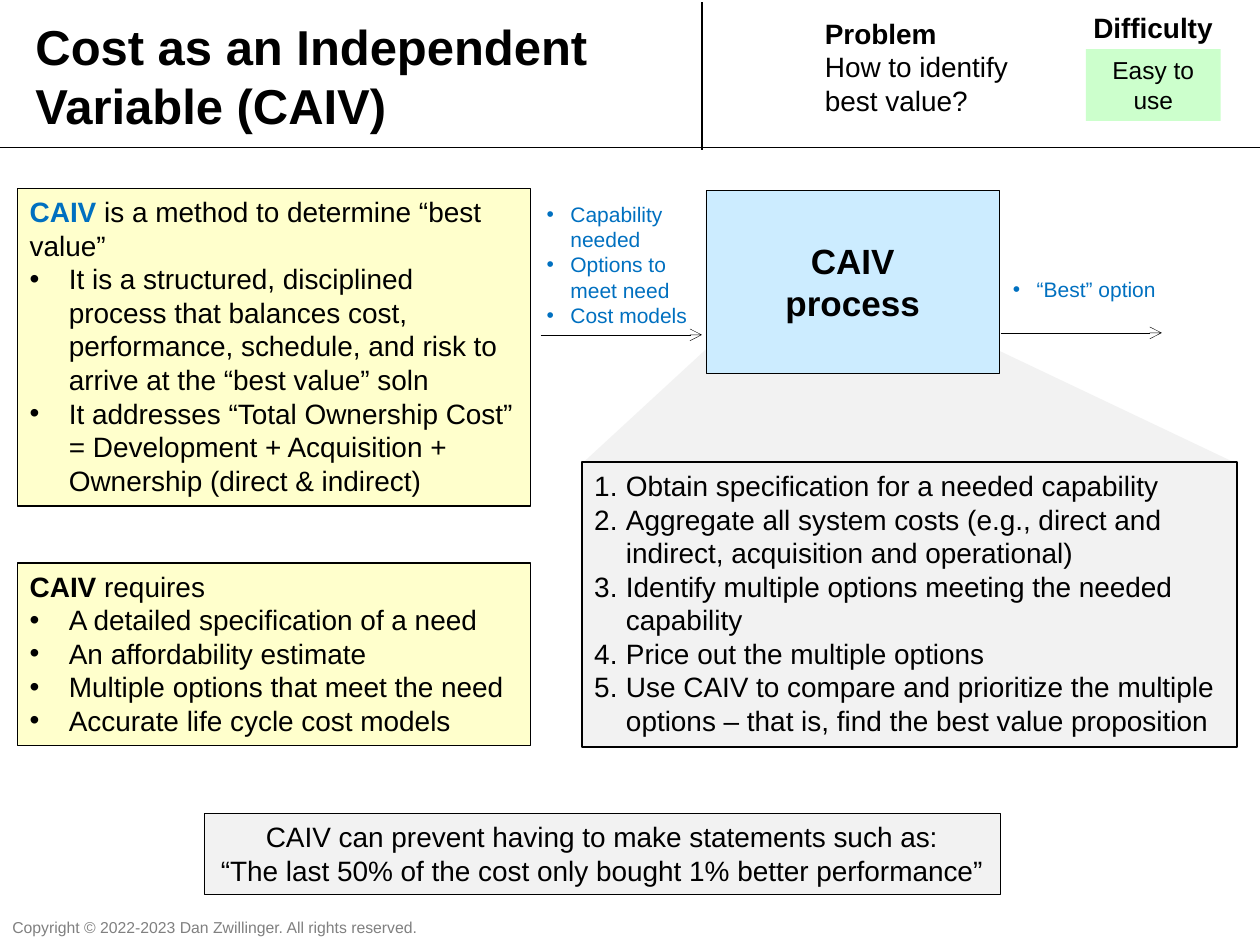
from lxml import etree
from pptx import Presentation
from pptx.dml.color import RGBColor
from pptx.enum.shapes import MSO_CONNECTOR, MSO_SHAPE
from pptx.enum.text import MSO_ANCHOR, MSO_AUTO_SIZE, PP_ALIGN
from pptx.oxml.ns import qn
from pptx.util import Cm, Pt

RECTANGLE = MSO_SHAPE.RECTANGLE
TRIANGLE = MSO_SHAPE.ISOSCELES_TRIANGLE
STRAIGHT = MSO_CONNECTOR.STRAIGHT
TOP, MIDDLE = MSO_ANCHOR.TOP, MSO_ANCHOR.MIDDLE
LEFT, CENTER = PP_ALIGN.LEFT, PP_ALIGN.CENTER
NO_AUTOFIT = MSO_AUTO_SIZE.NONE

FONT = "Arial"
BLACK, BLUE, GRAY = "000000", "0070C0", "808080"
YELLOW, SKY, GREEN, PALE = "FFFFCC", "CCECFF", "CCFFCC", "F2F2F2"


def rgb(value):
    return RGBColor.from_string(value)


def place(element, left, top, width, height):
    element.left, element.top = Cm(left), Cm(top)
    element.width, element.height = Cm(width), Cm(height)


def set_list(paragraph, marker, indent):
    properties = paragraph._p.get_or_add_pPr()
    properties.set("marL", str(Cm(indent)))
    properties.set("indent", str(-Cm(indent)))
    if marker == "number":
        etree.SubElement(properties, qn("a:buAutoNum"), type="arabicPeriod")
    else:
        etree.SubElement(properties, qn("a:buFont"), typeface=FONT)
        etree.SubElement(properties, qn("a:buChar"), char=marker)


def write(element, text, size=16, color=BLACK, bold=False, align=LEFT,
          marker=None, indent=0, anchor=TOP, wrap=True, lead=None,
          lead_color=BLACK):
    frame = element.text_frame
    frame.auto_size = NO_AUTOFIT
    frame.word_wrap = wrap
    frame.vertical_anchor = anchor
    lines = [text] if isinstance(text, str) else text
    for index, line in enumerate(lines):
        paragraph = frame.paragraphs[0] if index == 0 else frame.add_paragraph()
        paragraph.alignment = align
        pieces = [(line, color, bold)] if line else []
        if lead and index == 0:
            pieces.insert(0, (lead, lead_color, True))
        elif marker:
            set_list(paragraph, marker, indent)
        for words, word_color, word_bold in pieces:
            run = paragraph.add_run()
            run.text = words
            run.font.name = FONT
            run.font.size = Pt(size)
            run.font.bold = word_bold
            run.font.color.rgb = rgb(word_color)


def add_label(slide, box, text, **text_format):
    label = slide.shapes.add_textbox(*map(Cm, box))
    write(label, text, **text_format)


def add_panel(slide, box, fill, border=None, kind=RECTANGLE):
    panel = slide.shapes.add_shape(kind, *map(Cm, box))
    panel.shadow.inherit = False
    panel.fill.solid()
    panel.fill.fore_color.rgb = rgb(fill)
    if border:
        panel.line.color.rgb = rgb(BLACK)
        panel.line.width = Pt(border)
    else:
        panel.line.fill.background()
    return panel


def add_rule(slide, start, end, width=0.75, arrow=False):
    rule = slide.shapes.add_connector(STRAIGHT, *map(Cm, start + end))
    rule.line.color.rgb = rgb(BLACK)
    rule.line.width = Pt(width)
    if arrow:
        etree.SubElement(rule.line._get_or_add_ln(), qn("a:tailEnd"), type="arrow")
    etree.SubElement(rule._element.spPr, qn("a:effectLst"))


def add_header(slide):
    title = slide.shapes.title
    place(title, 0.46, 0.2, 12.24, 2.64)
    write(title, "Cost as an Independent Variable (CAIV)", size=28, bold=True)
    add_label(slide, (16.38, 0.2, 4.37, 2.31),
              ["", "How to identify best value?"], lead="Problem")
    add_rule(slide, (0, 2.97), (25.4, 2.97))
    add_rule(slide, (14.15, 3.02), (14.15, 0.05))
    add_label(slide, (21.79, 0.08, 2.92, 0.94), "Difficulty", bold=True, wrap=False)
    rating = add_panel(slide, (21.89, 0.99, 2.72, 1.45), GREEN)
    write(rating, "Easy to use", size=14, align=CENTER)


def add_process(slide):
    callout = add_panel(slide, (11.73, 5.21, 13.21, 4.14), PALE, kind=TRIANGLE)
    callout.adjustments[0] = 0.34
    steps = add_panel(slide, (11.73, 9.32, 13.21, 5.74), PALE, border=1)
    write(steps, [
        "Obtain specification for a needed capability",
        "Aggregate all system costs (e.g., direct and indirect, acquisition and operational)",
        "Identify multiple options meeting the needed capability",
        "Price out the multiple options",
        "Use CAIV to compare and prioritize the multiple options – that is, "
        "find the best value proposition",
    ], marker="number", indent=0.64)
    process = add_panel(slide, (14.23, 3.84, 5.92, 3.68), SKY, border=0.25)
    write(process, ["CAIV", "process"], size=20, bold=True, align=CENTER, anchor=MIDDLE)

    flow_format = {"size": 12, "color": BLUE, "marker": "•", "indent": 0.48}
    add_label(slide, (10.77, 3.94, 3.63, 2.82),
              ["Capability needed", "Options to meet need", "Cost models"], **flow_format)
    add_rule(slide, (10.9, 6.75), (14.15, 6.75), width=0.25, arrow=True)
    add_label(slide, (20.17, 5.46, 4.06, 0.76), "“Best” option", **flow_format)
    add_rule(slide, (20.17, 6.71), (23.42, 6.71), width=0.25, arrow=True)


def add_summary(slide, top, height, lines, lead_color):
    summary = add_panel(slide, (0.35, top, 10.34, height), YELLOW, border=0.75)
    write(summary, lines, lead="CAIV", lead_color=lead_color, marker="•", indent=0.79)


def add_statement(slide):
    statement = add_panel(slide, (4.11, 16.4, 16.05, 1.63), PALE, border=0.25)
    write(statement, [
        "CAIV can prevent having to make statements such as:",
        "“The last 50% of the cost only bought 1% better performance”",
    ], align=CENTER)


def main():
    presentation = Presentation()
    presentation.slide_width, presentation.slide_height = Cm(25.4), Cm(19.05)
    slide = presentation.slides.add_slide(presentation.slide_layouts[5])
    add_header(slide)
    add_process(slide)
    add_summary(slide, 3.8, 6.4, [
        " is a method to determine “best value”",
        "It is a structured, disciplined process that balances cost, performance, "
        "schedule, and risk to arrive at the “best value” soln",
        "It addresses “Total Ownership Cost” = Development + Acquisition + "
        "Ownership (direct & indirect)",
    ], BLUE)
    add_summary(slide, 11.35, 3.68, [
        " requires",
        "A detailed specification of a need",
        "An affordability estimate",
        "Multiple options that meet the need",
        "Accurate life cycle cost models",
    ], BLACK)
    add_statement(slide)
    add_label(slide, (0, 18.38, 8.79, 0.64),
              "Copyright © 2022-2023 Dan Zwillinger. All rights reserved.",
              size=9, color=GRAY, wrap=False)
    presentation.save("out.pptx")


if __name__ == "__main__":
    main()
